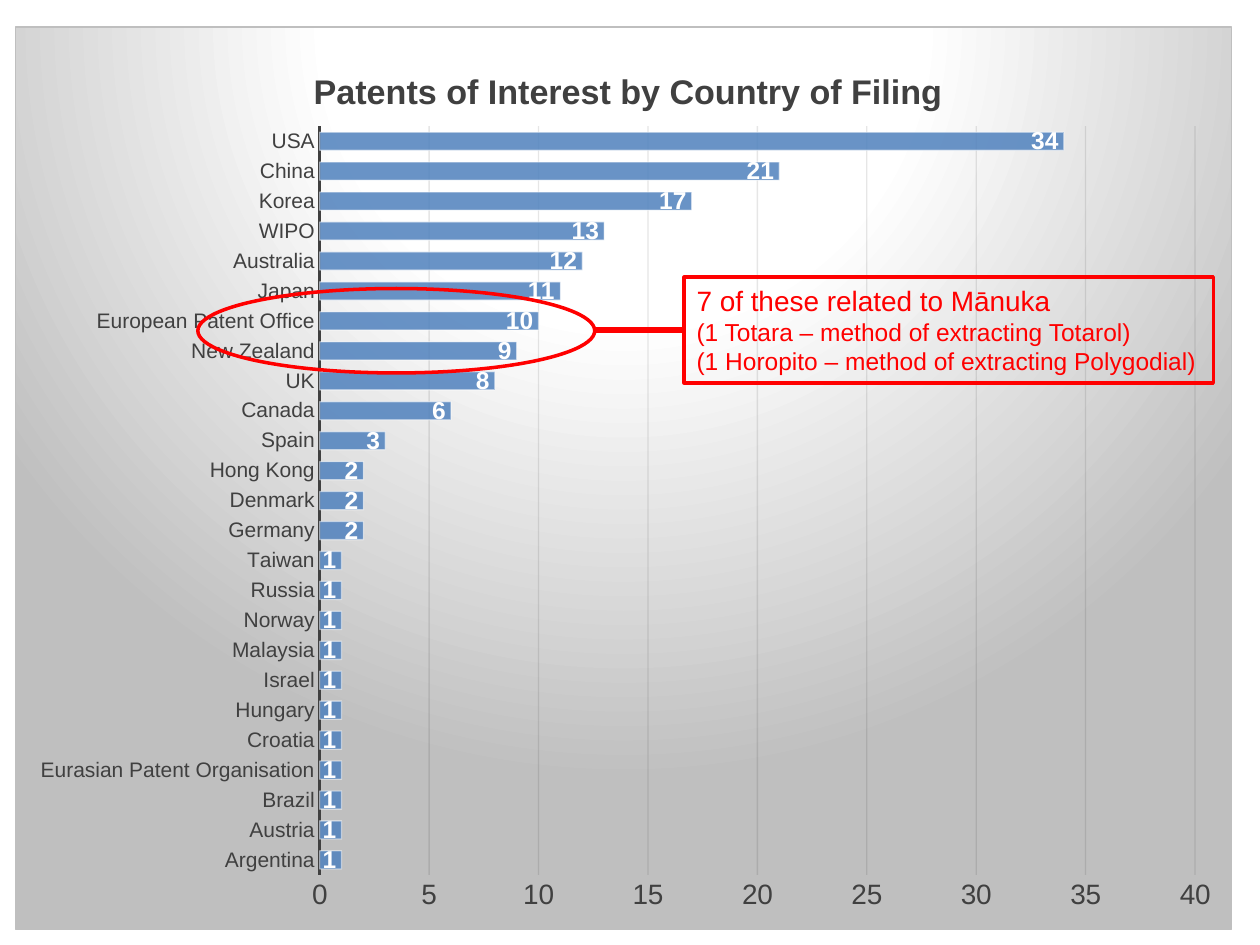
from lxml import etree
from pptx import Presentation
from pptx.chart.data import CategoryChartData
from pptx.dml.color import RGBColor
from pptx.enum.chart import XL_CHART_TYPE as ChartType
from pptx.enum.chart import XL_LABEL_POSITION as LabelPosition
from pptx.enum.chart import XL_TICK_MARK as TickMark
from pptx.enum.shapes import MSO_CONNECTOR as Connector
from pptx.enum.shapes import MSO_SHAPE as Shape
from pptx.enum.text import MSO_ANCHOR as Anchor
from pptx.enum.text import MSO_AUTO_SIZE as AutoSize
from pptx.enum.text import PP_ALIGN as Align
from pptx.oxml import parse_xml
from pptx.oxml.ns import nsdecls, qn
from pptx.util import Inches, Pt

BLUE = RGBColor(0x4F, 0x81, 0xBD)
RED = RGBColor(0xFF, 0x00, 0x00)
WHITE = RGBColor(0xFF, 0xFF, 0xFF)
BLACK = RGBColor(0x00, 0x00, 0x00)
DARK = RGBColor(0x40, 0x40, 0x40)
GRID = RGBColor(0x0D, 0x0D, 0x0D)
SILVER = RGBColor(0xBF, 0xBF, 0xBF)
FONT = "Arial"

FILINGS = [
    ("Argentina", 1), ("Austria", 1), ("Brazil", 1),
    ("Eurasian Patent Organisation", 1), ("Croatia", 1), ("Hungary", 1),
    ("Israel", 1), ("Malaysia", 1), ("Norway", 1), ("Russia", 1),
    ("Taiwan", 1), ("Germany", 2), ("Denmark", 2), ("Hong Kong", 2),
    ("Spain", 3), ("Canada", 6), ("UK", 8), ("New Zealand", 9),
    ("European Patent Office", 10), ("Japan", 11), ("Australia", 12),
    ("WIPO", 13), ("Korea", 17), ("China", 21), ("USA", 34),
]
NOTE = [
    ("7 of these related to Mānuka", 16),
    ("(1 Totara – method of extracting Totarol)", 14),
    ("(1 Horopito – method of extracting Polygodial)", 14),
]


def style_font(font, size, color, bold=False):
    formats = {"name": FONT, "size": Pt(size), "bold": bold}
    for name, value in formats.items():
        setattr(font, name, value)
    font.color.rgb = color


def style_line(line, color, width):
    line.color.rgb = color
    line.width = Pt(width)


def set_alpha(fill_owner, percent):
    """Make the first solid colour inside an element partly transparent."""
    color = next(fill_owner.iter(qn("a:srgbClr")))
    etree.SubElement(color, qn("a:alpha")).set("val", str(percent * 1000))


def set_layout(parent, index, **fractions):
    """Place a chart part by fractions of the chart area."""
    old = parent.find(qn("c:layout"))
    if old is not None:
        parent.remove(old)
    target = '<c:layoutTarget val="inner"/>' if "w" in fractions else ""
    modes = "".join(f'<c:{key}Mode val="edge"/>' for key in "xy")
    values = "".join(f'<c:{key} val="{value}"/>' for key, value in fractions.items())
    parent.insert(index, parse_xml(
        f'<c:layout {nsdecls("c")}><c:manualLayout>{target}{modes}{values}'
        "</c:manualLayout></c:layout>"))


def set_chart_background(chart_part):
    stops = "".join(
        f'<a:gs pos="{place * 1000}"><a:srgbClr val="{color}"/></a:gs>'
        for place, color in [(0, WHITE), (39, WHITE), (100, SILVER)])
    background = parse_xml(
        f'<c:spPr {nsdecls("c", "a")}><a:gradFill><a:gsLst>{stops}</a:gsLst>'
        '<a:path path="circle"><a:fillToRect l="50000" t="-80000" r="50000" b="180000"/>'
        f'</a:path></a:gradFill><a:ln w="{Pt(0.75)}"><a:solidFill>'
        f'<a:srgbClr val="{SILVER}"/></a:solidFill></a:ln></c:spPr>')
    chart_part.addnext(background)


def style_axes(chart, plot_area):
    for axis, size in [(chart.category_axis, 12), (chart.value_axis, 16)]:
        axis.major_tick_mark = axis.minor_tick_mark = TickMark.NONE
        style_font(axis.tick_labels.font, size, DARK)
    style_line(chart.category_axis.format.line, DARK, 1.5)

    values = chart.value_axis
    formats = {"minimum_scale": 0, "maximum_scale": 40, "major_unit": 5,
               "has_major_gridlines": True}
    for name, value in formats.items():
        setattr(values, name, value)
    values.format.line.fill.background()
    style_line(values.major_gridlines.format.line, GRID, 0.75)
    set_alpha(next(plot_area.iter(qn("c:majorGridlines"))), 10)


def style_bars(plot, plot_area):
    plot.gap_width = 65
    plot.vary_by_categories = False
    bars = plot.series[0]
    bars.format.fill.solid()
    bars.format.fill.fore_color.rgb = BLUE
    style_line(bars.format.line, WHITE, 0.75)
    shape_format = next(plot_area.iter(qn("c:ser"))).find(qn("c:spPr"))
    set_alpha(shape_format.find(qn("a:solidFill")), 85)
    set_alpha(shape_format.find(qn("a:ln")), 50)

    labels = bars.data_labels
    labels.show_value = True
    labels.position = LabelPosition.INSIDE_END
    style_font(labels.font, 14, WHITE, bold=True)


def add_filing_chart(page):
    data = CategoryChartData()
    data.categories = [country for country, _ in FILINGS]
    data.add_series("Series 1", [count for _, count in FILINGS])
    chart = page.shapes.add_chart(
        ChartType.BAR_CLUSTERED, Inches(0.12), Inches(0.21),
        Inches(9.66), Inches(7.17), data).chart
    chart.has_legend = False
    style_font(chart.font, 16, BLACK)
    chart_part = next(chart.plots[0].chart.element.iter(qn("c:chart")))
    set_chart_background(chart_part)

    # Title
    chart.has_title = True
    para = chart.chart_title.text_frame.paragraphs[0]
    span = para.add_run()
    span.text = "Patents of Interest by Country of Filing"
    style_font(span.font, 19.5, DARK, bold=True)
    set_layout(chart_part.find(qn("c:title")), 1, x=0.24, y=0.04)

    # Plot
    plot_area = chart_part.find(qn("c:plotArea"))
    set_layout(plot_area, 0, x=0.25, y=0.11, w=0.72, h=0.83)
    style_axes(chart, plot_area)
    style_bars(chart.plots[0], plot_area)


def add_outline(page, kind, left, top, width, height):
    outline = page.shapes.add_shape(
        kind, Inches(left), Inches(top), Inches(width), Inches(height))
    outline.shadow.inherit = False
    outline.fill.background()
    style_line(outline.line, RED, 2)
    return outline


def write_note(box):
    frame = box.text_frame
    formats = {"word_wrap": True, "auto_size": AutoSize.SHAPE_TO_FIT_TEXT,
               "vertical_anchor": Anchor.TOP}
    for name, value in formats.items():
        setattr(frame, name, value)
    for index, (text, size) in enumerate(NOTE):
        para = frame.add_paragraph() if index else frame.paragraphs[0]
        para.alignment = Align.LEFT
        span = para.add_run()
        span.text = text
        style_font(span.font, size, RED)


def add_link(page, left, middle, box):
    link = page.shapes.add_connector(
        Connector.STRAIGHT, Inches(left), Inches(middle), box.left, Inches(middle))
    link.end_connect(box, 1)
    style_line(link.line, RED, 3)
    etree.SubElement(link.element.spPr, qn("a:effectLst"))


def main():
    deck = Presentation()
    deck.slide_width, deck.slide_height = Inches(10), Inches(7.5)
    page = deck.slides.add_slide(deck.slide_layouts[6])

    add_filing_chart(page)

    # Callout on the New Zealand filings
    add_outline(page, Shape.OVAL, 1.57, 2.29, 3.15, 0.67)
    box = add_outline(page, Shape.RECTANGLE, 5.43, 2.2, 4.2, 0.84)
    write_note(box)
    add_link(page, 4.72, 2.62, box)

    deck.save("out.pptx")


if __name__ == "__main__":
    main()
